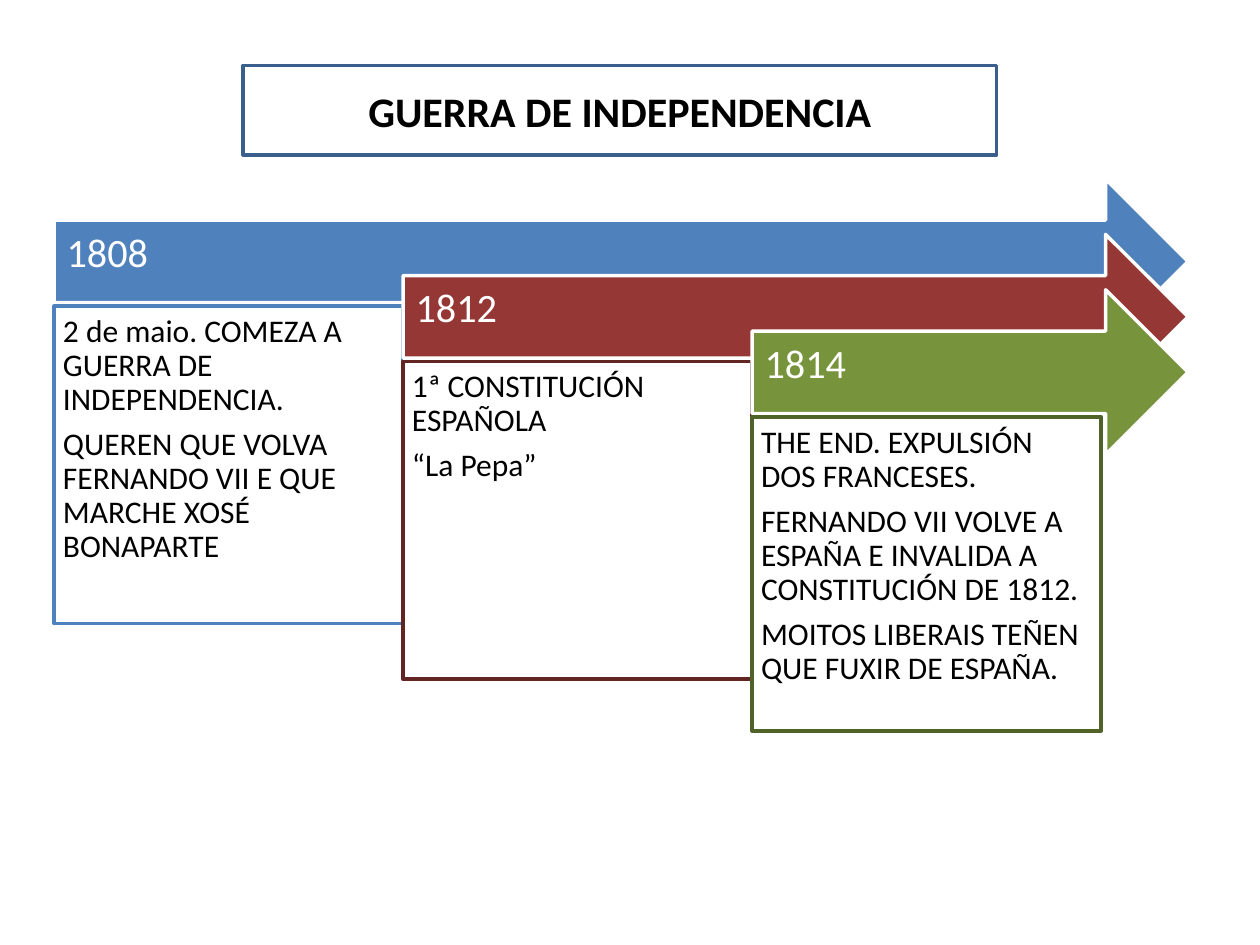
from pptx import Presentation
from pptx.dml.color import RGBColor
from pptx.enum.shapes import MSO_SHAPE
from pptx.enum.text import MSO_ANCHOR, PP_ALIGN
from pptx.util import Inches, Pt

RECT, ARROW = MSO_SHAPE.RECTANGLE, MSO_SHAPE.RIGHT_ARROW
TOP, MIDDLE = MSO_ANCHOR.TOP, MSO_ANCHOR.MIDDLE
LEFT, CENTER = PP_ALIGN.LEFT, PP_ALIGN.CENTER

FONT = "Calibri"
WHITE, BLACK = "FFFFFF", "000000"

# Staircase of stages: each starts one step further right and down
START_X, START_Y = 0.43, 1.42
STEP_X, STEP_Y = 2.77, 0.44
ARROW_END, ARROW_H = 9.43, 1.31
BOX_DROP = 1.01

# Year, arrow colour, box outline, box height, paragraphs
STAGES = [
    ("1808", "4F81BD", "4F81BD", 2.52,
     ["2 de maio. COMEZA A GUERRA DE INDEPENDENCIA.",
      "QUEREN QUE VOLVA FERNANDO VII E QUE MARCHE XOSÉ BONAPARTE"]),
    ("1812", "953735", "632523", 2.52,
     ["1ª CONSTITUCIÓN ESPAÑOLA",
      "“La Pepa”"]),
    ("1814", "77933C", "4F6228", 2.49,
     ["THE END. EXPULSIÓN DOS FRANCESES.",
      "FERNANDO VII VOLVE A ESPAÑA E INVALIDA A CONSTITUCIÓN DE 1812.",
      "MOITOS LIBERAIS TEÑEN QUE FUXIR DE ESPAÑA."]),
]


def rgb(color):
    return RGBColor.from_string(color)


def add_block(slide, kind, x, y, w, h, fill, line):
    sp = slide.shapes.add_shape(kind, Inches(x), Inches(y), Inches(w), Inches(h))
    sp.shadow.inherit = False
    sp.fill.solid()
    sp.fill.fore_color.rgb = rgb(fill)
    sp.line.color.rgb = rgb(line)
    sp.line.width = Pt(2)
    return sp


def set_text(sp, paragraphs, size, color, anchor, margins,
             align=LEFT, bold=False, spacing=0.9):
    tf = sp.text_frame
    tf.word_wrap = True
    tf.vertical_anchor = anchor
    (tf.margin_left, tf.margin_top,
     tf.margin_right, tf.margin_bottom) = [Inches(m) for m in margins]
    tf.text = "\n".join(paragraphs)
    for p in tf.paragraphs:
        p.alignment = align
        p.line_spacing = spacing
        p.space_after = Pt(0.35 * size if len(paragraphs) > 1 else 0)
        for r in p.runs:
            r.font.name = FONT
            r.font.size = Pt(size)
            r.font.bold = bold
            r.font.color.rgb = rgb(color)


def add_title(slide, text):
    sp = add_block(slide, RECT, 1.93, 0.52, 5.98, 0.71, WHITE, "3A5F8C")
    set_text(sp, [text], 24, BLACK, MIDDLE, (0.1, 0.05, 0.1, 0.05),
             CENTER, True, 1.0)


def add_stage(slide, index, year, color, outline, box_h, paragraphs):
    x = START_X + index * STEP_X
    y = START_Y + index * STEP_Y
    arrow = add_block(slide, ARROW, x, y, ARROW_END - x, ARROW_H, color, WHITE)
    set_text(arrow, [year], 23, WHITE, MIDDLE, (0.1, 0.1, 0.28, 0.21))
    box = add_block(slide, RECT, x, y + BOX_DROP, STEP_X, box_h, WHITE, outline)
    set_text(box, paragraphs, 18, BLACK, TOP, (0.07,) * 4)


def main():
    prs = Presentation()
    prs.slide_width, prs.slide_height = Inches(10), Inches(7.5)
    slide = prs.slides.add_slide(prs.slide_layouts[6])

    # Timeline, later stages in front
    for i, stage in enumerate(STAGES):
        add_stage(slide, i, *stage)

    # Heading
    add_title(slide, "GUERRA DE INDEPENDENCIA")

    prs.save("out.pptx")


if __name__ == "__main__":
    main()
